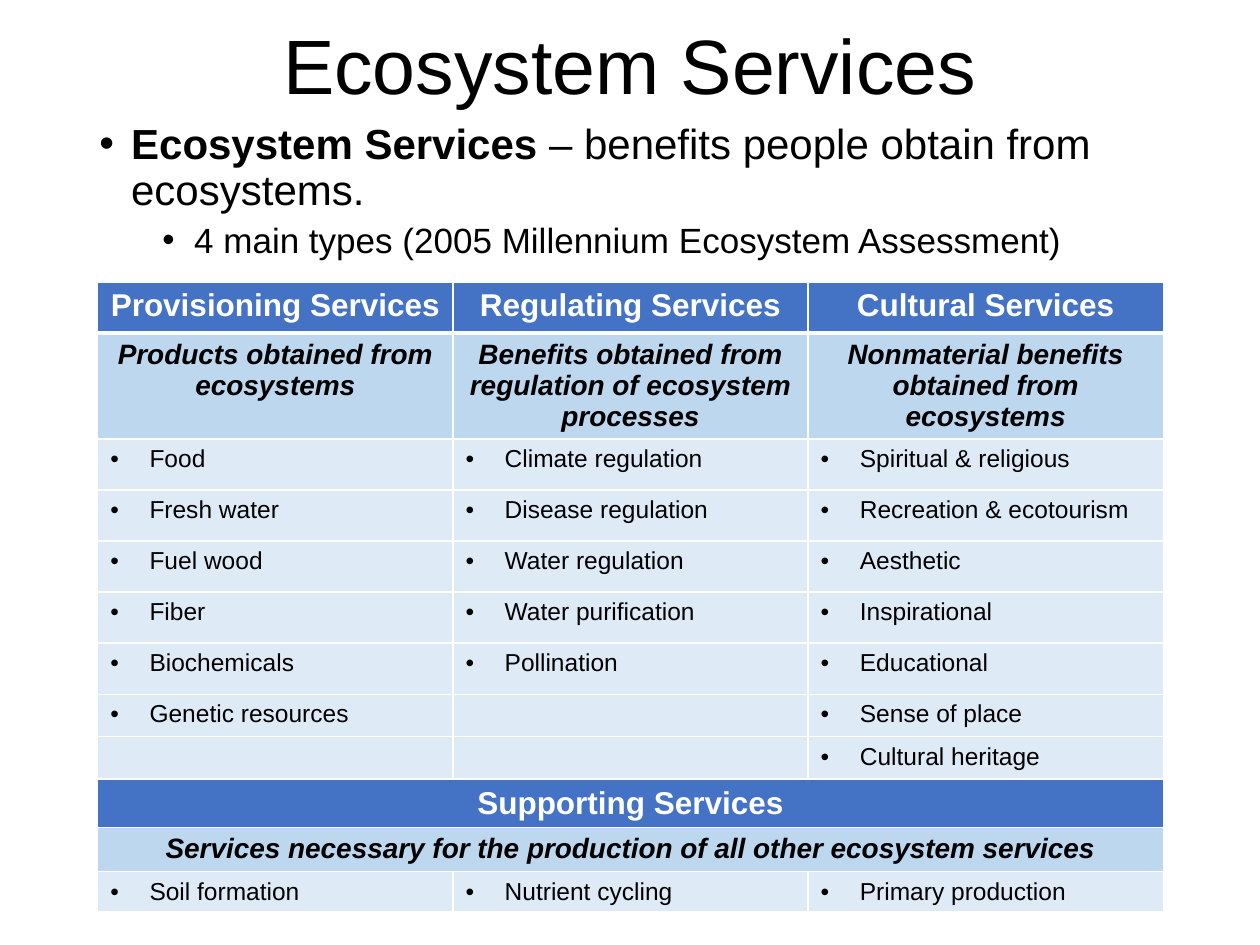
from lxml import etree
from pptx import Presentation
from pptx.dml.color import RGBColor
from pptx.enum.text import MSO_ANCHOR, MSO_AUTO_SIZE, PP_ALIGN
from pptx.oxml.ns import qn
from pptx.util import Cm, Pt

CENTER, LEFT = PP_ALIGN.CENTER, PP_ALIGN.LEFT
MIDDLE, TOP = MSO_ANCHOR.MIDDLE, MSO_ANCHOR.TOP
NO_AUTOFIT = MSO_AUTO_SIZE.NONE
FONT = "Arial"
COLORS = {"text": "000000", "white": "FFFFFF", "heading": "4472C4",
          "summary": "BDD7EE", "example": "DEEBF7"}

# Content
TITLE = "Ecosystem Services"
DEFINITION = [("Ecosystem Services", True),
              (" – benefits people obtain from ecosystems.", False)]
TYPES_NOTE = "4 main types (2005 Millennium Ecosystem Assessment)"
# Each row: kind, height in cm, cell texts (a single text spans all columns)
SERVICES = [
    ("heading", 1.03, ["Provisioning Services", "Regulating Services", "Cultural Services"]),
    ("summary", 2.13, ["Products obtained from ecosystems",
                       "Benefits obtained from regulation of ecosystem processes",
                       "Nonmaterial benefits obtained from ecosystems"]),
    ("example", 1.03, ["Food", "Climate regulation", "Spiritual & religious"]),
    ("example", 1.03, ["Fresh water", "Disease regulation", "Recreation & ecotourism"]),
    ("example", 1.03, ["Fuel wood", "Water regulation", "Aesthetic"]),
    ("example", 1.03, ["Fiber", "Water purification", "Inspirational"]),
    ("example", 1.03, ["Biochemicals", "Pollination", "Educational"]),
    ("example", 0.81, ["Genetic resources", "", "Sense of place"]),
    ("example", 0.81, ["", "", "Cultural heritage"]),
    ("heading", 0.97, ["Supporting Services"]),
    ("summary", 0.89, ["Services necessary for the production of all other ecosystem services"]),
    ("example", 0.81, ["Soil formation", "Nutrient cycling", "Primary production"]),
]
COLUMNS, COLUMN_WIDTH = 3, 7.16
FORMATS = {
    "heading": dict(size=18, bold=True, color="white", align=CENTER),
    "summary": dict(size=16, bold=True, italic=True, align=CENTER),
    "example": dict(size=14, bullet=(0.79, 0.79)),
}


def write(paragraph, text, size=14, bold=False, italic=False, color="text",
          align=LEFT, bullet=None, line=None, before=None):
    """Add a run; bullet is (left margin, hanging indent) in cm."""
    paragraph.alignment = align
    if line is not None:
        paragraph.line_spacing = line
    if before is not None:
        paragraph.space_before = Pt(before)
    if not text:  # keeps an empty cell as low as its row
        etree.SubElement(paragraph._p, qn("a:endParaRPr"), sz=str(size * 100))
        return
    run = paragraph.add_run()
    run.text = text
    font = run.font
    font.name, font.size, font.bold, font.italic = FONT, Pt(size), bold, italic
    font.color.rgb = RGBColor.from_string(COLORS[color])
    if bullet:
        margin, hanging = bullet
        properties = paragraph._p.get_or_add_pPr()
        properties.set("marL", str(Cm(margin)))
        properties.set("indent", str(-Cm(hanging)))
        etree.SubElement(properties, qn("a:buFont"), typeface=FONT)
        etree.SubElement(properties, qn("a:buChar"), char="•")


def set_borders(cell, top=1, bottom=1):
    widths = {"lnL": 1, "lnR": 1, "lnT": top, "lnB": bottom}
    properties = cell._tc.get_or_add_tcPr()
    for position, (side, width) in enumerate(widths.items()):
        border = etree.Element(qn(f"a:{side}"), w=str(Pt(width)))
        fill = etree.SubElement(border, qn("a:solidFill"))
        etree.SubElement(fill, qn("a:srgbClr"), val=COLORS["white"])
        properties.insert(position, border)


def place(placeholder, left, top, width, height, anchor):
    placeholder.left, placeholder.top = Cm(left), Cm(top)
    placeholder.width, placeholder.height = Cm(width), Cm(height)
    frame = placeholder.text_frame
    frame.auto_size, frame.vertical_anchor = NO_AUTOFIT, anchor
    frame.word_wrap = True
    return frame


def main():
    deck = Presentation()
    deck.slide_width, deck.slide_height = Cm(25.4), Cm(19.05)
    slide = deck.slides.add_slide(deck.slide_layouts[1])

    # Title
    heading = place(slide.shapes.title, 1.75, 0, 21.9, 2.79, MIDDLE)
    write(heading.paragraphs[0], TITLE, size=44, align=CENTER, line=0.9)

    # Definition
    body = place(slide.placeholders[1], 1.75, 2.36, 21.9, 13.8, TOP)
    definition = body.paragraphs[0]
    (term, term_bold), (meaning, meaning_bold) = DEFINITION
    write(definition, term, size=24, bold=term_bold, line=0.9, before=10,
          bullet=(0.64, 0.64))
    write(definition, meaning, size=24, bold=meaning_bold)
    types_note = body.add_paragraph()
    types_note.level = 1
    write(types_note, TYPES_NOTE, size=20, line=0.9, before=5, bullet=(1.91, 0.64))

    # Table of services
    total_height = sum(height for _, height, _ in SERVICES)
    services = slide.shapes.add_table(
        len(SERVICES), COLUMNS, Cm(1.97), Cm(5.68),
        Cm(COLUMNS * COLUMN_WIDTH), Cm(total_height)).table
    for column in services.columns:
        column.width = Cm(COLUMN_WIDTH)
    for r, (kind, height, texts) in enumerate(SERVICES):
        services.rows[r].height = Cm(height)
        if len(texts) == 1:
            services.cell(r, 0).merge(services.cell(r, COLUMNS - 1))
        for c in range(COLUMNS):
            cell = services.cell(r, c)
            cell.fill.solid()
            cell.fill.fore_color.rgb = RGBColor.from_string(COLORS[kind])
            set_borders(cell, top=3 if r == 1 else 1, bottom=3 if r == 0 else 1)
            if c < len(texts):
                write(cell.text_frame.paragraphs[0], texts[c], **FORMATS[kind])

    deck.save("out.pptx")


if __name__ == "__main__":
    main()
